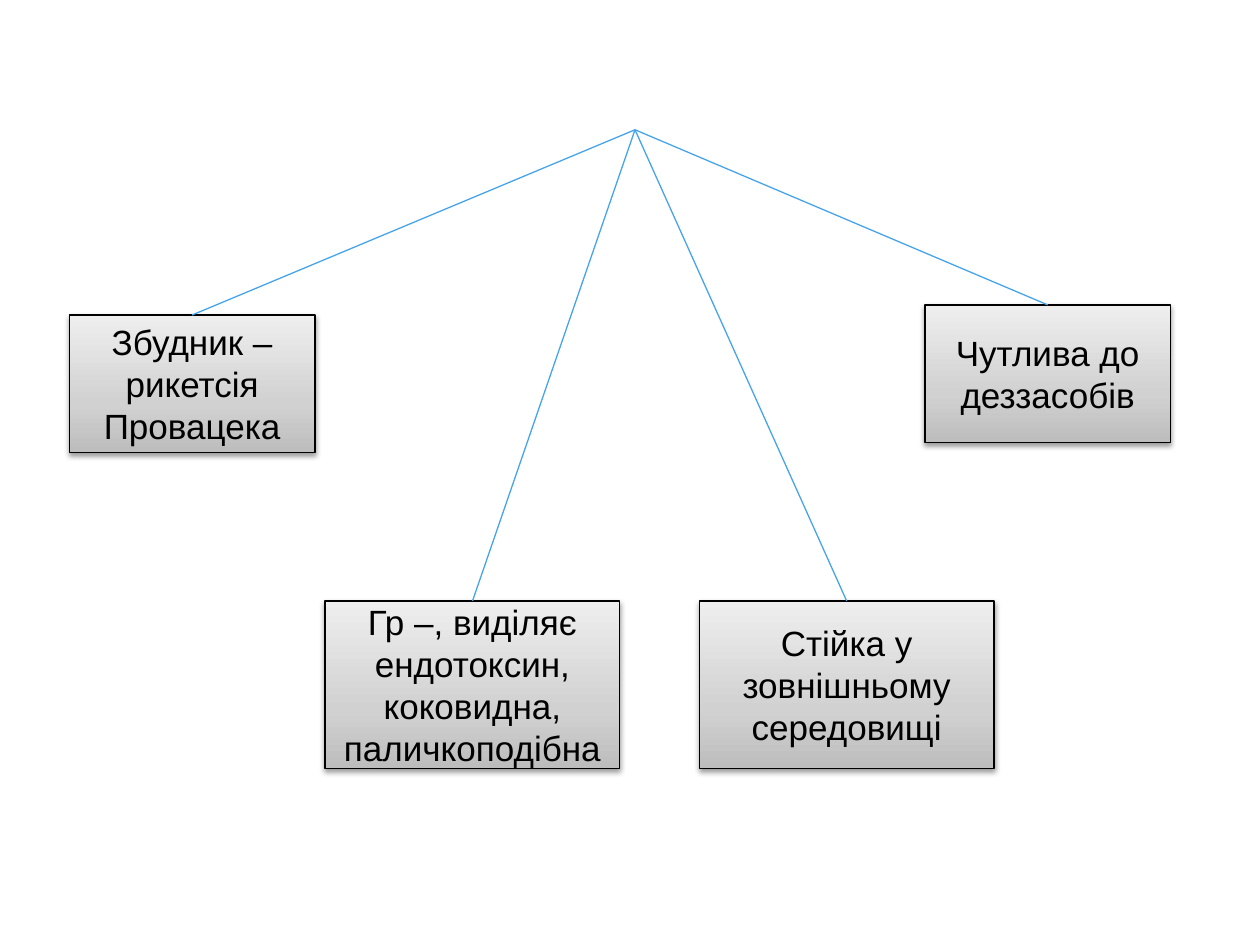
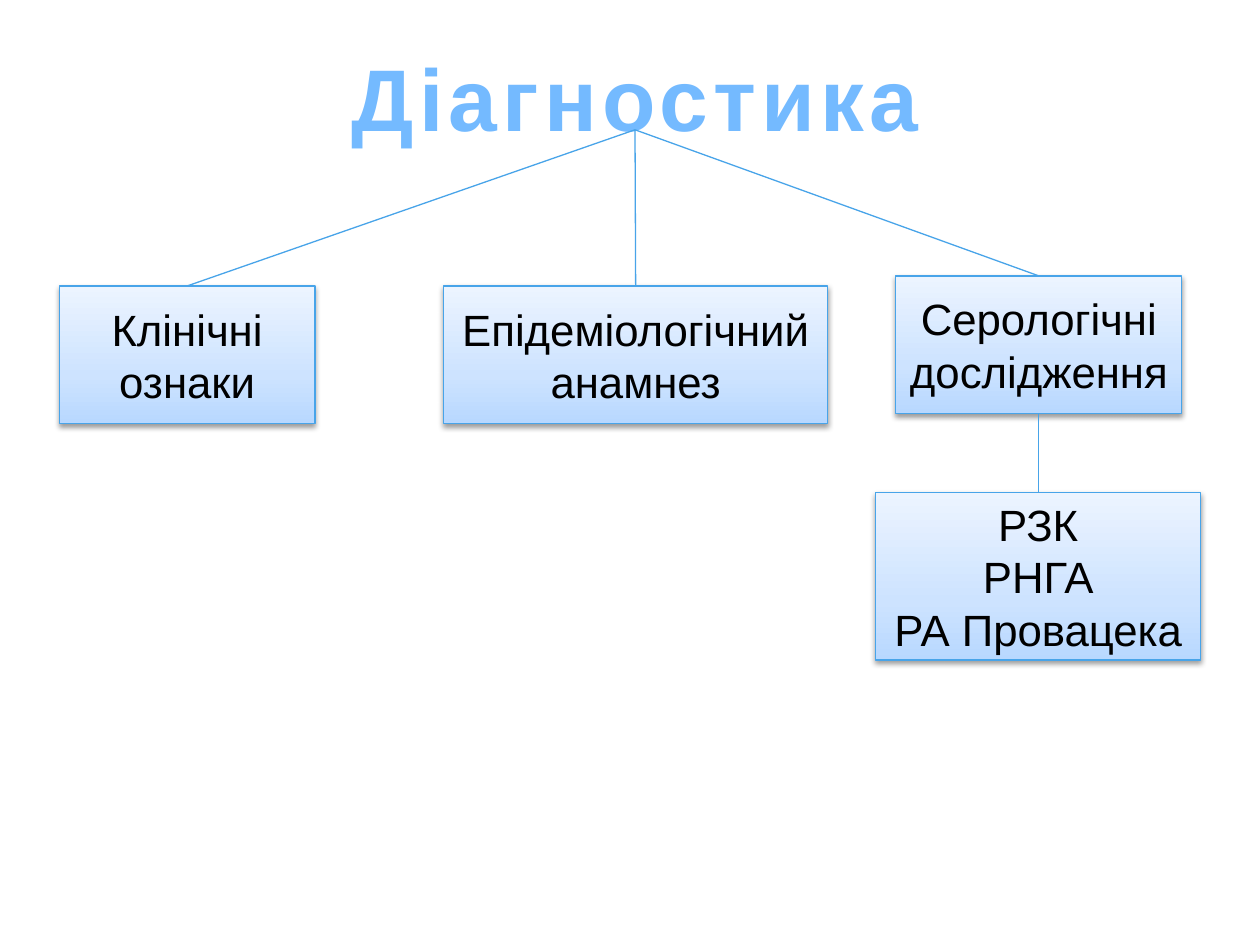
from lxml.etree import SubElement
from pptx import Presentation
from pptx.dml.color import RGBColor
from pptx.enum.shapes import MSO_CONNECTOR, MSO_SHAPE
from pptx.enum.text import MSO_ANCHOR, PP_ALIGN
from pptx.oxml import parse_xml
from pptx.oxml.ns import nsdecls, qn
from pptx.util import Inches, Pt

BLACK = RGBColor(0x00, 0x00, 0x00)
BLUE = RGBColor(0x48, 0xA4, 0xE9)
TITLE_BLUE = RGBColor(0x74, 0xBA, 0xFF)
GRAYS = [RGBColor(0xBD, 0xBD, 0xBD), RGBColor(0xD1, 0xD1, 0xD1), RGBColor(0xEE, 0xEE, 0xEE)]
BLUES = [RGBColor(0xB8, 0xD8, 0xFF), RGBColor(0xCD, 0xE3, 0xFF), RGBColor(0xEC, 0xF4, 0xFF)]
STOPS = [0, 35, 100]
FONT = "Arial"
ROOT = (5.04, 1.03)


def shadow_xml(color, alpha, blur, dist, angle):
    return parse_xml(
        f'<a:outerShdw {nsdecls("a")} blurRad="{Pt(blur)}" dist="{Pt(dist)}" '
        f'dir="{angle * 60000}" rotWithShape="0"><a:srgbClr val="{color}">'
        f'<a:alpha val="{alpha * 1000}"/></a:srgbClr></a:outerShdw>')


def write(tf, text, size=20, color=BLACK, bold=False):
    tf.word_wrap = True
    tf.vertical_anchor = MSO_ANCHOR.MIDDLE
    tf.text = text
    for p in tf.paragraphs:
        p.alignment = PP_ALIGN.CENTER
        for r in p.runs:
            r.font.name = FONT
            r.font.size = Pt(size)
            r.font.bold = bold
            r.font.color.rgb = color


class Diagram:
    """Draws tree diagrams in one shared style on the current slide."""

    def __init__(self, prs):
        self.prs = prs

    def new_slide(self, shades, border, size):
        self.s = self.prs.slides.add_slide(self.prs.slide_layouts[6])
        self.shades, self.border, self.size = shades, border, size

    def title(self, text):
        tb = self.s.shapes.add_textbox(Inches(1.17), Inches(0.5), Inches(7.75), Inches(0.53))
        write(tb.text_frame, text, size=50, color=TITLE_BLUE, bold=True)
        rPr = tb.text_frame.paragraphs[0].runs[0].font._element
        rPr.set("spc", "300")
        effects = parse_xml(f'<a:effectLst {nsdecls("a")}/>')
        effects.append(shadow_xml(TITLE_BLUE, 40, 2, 1, 45))
        rPr.find(qn("a:solidFill")).addnext(effects)

    def box(self, text, x, y, w, h=1.09):
        sp = self.s.shapes.add_shape(MSO_SHAPE.RECTANGLE, Inches(x), Inches(y), Inches(w), Inches(h))
        sp.fill.gradient()
        sp.fill.gradient_angle = 90
        gsLst = sp._element.spPr.find(qn("a:gradFill")).find(qn("a:gsLst"))
        for gs in list(gsLst):
            gsLst.remove(gs)
        for stop, shade in zip(STOPS, self.shades):
            gs = SubElement(gsLst, qn("a:gs"), pos=str(stop * 1000))
            SubElement(gs, qn("a:srgbClr"), val=str(shade))
        sp.line.color.rgb = self.border
        sp.line.width = Pt(0.75)
        sp.shadow.inherit = False
        sp._element.spPr.find(qn("a:effectLst")).append(shadow_xml(BLACK, 38, 3.1, 1.6, 90))
        write(sp.text_frame, text, size=self.size)
        return sp

    def line(self, x, y, child):
        c = self.s.shapes.add_connector(
            MSO_CONNECTOR.STRAIGHT, x, y, child.left + child.width // 2, child.top)
        c.line.color.rgb = BLUE
        c.line.width = Pt(0.75)
        SubElement(c._element.spPr, qn("a:effectLst"))

    def branch(self, boxes):
        for child in [self.box(*b) for b in boxes]:
            self.line(Inches(ROOT[0]), Inches(ROOT[1]), child)


def main():
    prs = Presentation()
    prs.slide_width, prs.slide_height = Inches(10), Inches(7.5)
    d = Diagram(prs)

    d.new_slide(GRAYS, BLACK, 20)
    d.branch([
        ("Збудник – рикетсія Провацека", 0.55, 2.5, 1.95),
        ("Гр –, виділяє ендотоксин, коковидна, паличкоподібна", 2.58, 4.77, 2.34, 1.33),
        ("Стійка у зовнішньому середовищі", 5.55, 4.77, 2.34, 1.33),
        ("Чутлива до деззасобів", 7.34, 2.42, 1.95),
    ])

    d.new_slide(BLUES, BLUE, 25)
    d.title("Діагностика")
    d.branch([
        ("Клінічні ознаки", 0.47, 2.27, 2.03),
        ("Епідеміологічний анамнез", 3.52, 2.27, 3.05),
        ("Серологічні дослідження", 7.11, 2.19, 2.27),
    ])
    tests = d.box("РЗК\nРНГА\nРА Провацека", 6.95, 3.91, 2.58, 1.33)
    d.line(Inches(8.24), Inches(3.28), tests)

    prs.save("out.pptx")


if __name__ == "__main__":
    main()
